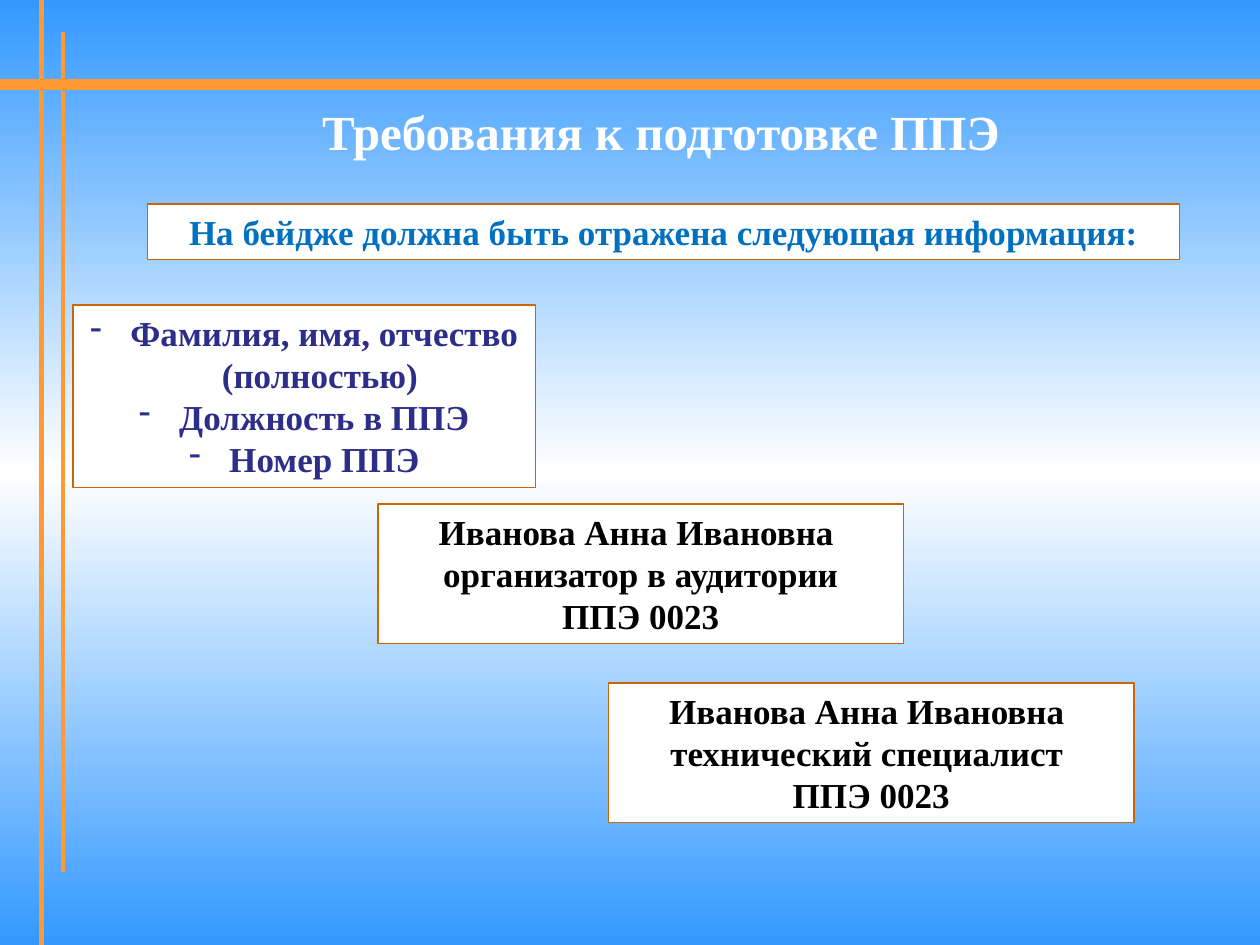
from copy import deepcopy
from dataclasses import dataclass

from pptx import Presentation
from pptx.dml.color import RGBColor
from pptx.enum.shapes import MSO_CONNECTOR, MSO_SHAPE
from pptx.enum.text import MSO_ANCHOR, MSO_AUTO_SIZE, PP_ALIGN
from pptx.oxml.ns import qn
from pptx.slide import Slide
from pptx.text.text import TextFrame
from pptx.util import Inches, Pt

CENTER = PP_ALIGN.CENTER
MIDDLE = MSO_ANCHOR.MIDDLE
TOP = MSO_ANCHOR.TOP
NO_FIT = MSO_AUTO_SIZE.NONE
GROW = MSO_AUTO_SIZE.SHAPE_TO_FIT_TEXT
STRAIGHT = MSO_CONNECTOR.STRAIGHT
RECTANGLE = MSO_SHAPE.RECTANGLE
TITLE_ONLY = 5


@dataclass(frozen=True)
class Theme:
    font: str = "Times New Roman"
    title_size: int = 28
    body_size: int = 20
    border_width: float = 0.75
    sky: str = "3399FF"
    white: str = "FFFFFF"
    rule: str = "FF9933"
    border: str = "CC6600"
    heading: str = "0070C0"
    listing: str = "2D2D8A"
    badge: str = "000000"


@dataclass(frozen=True)
class Rule:
    start: tuple[float, float]
    end: tuple[float, float]
    weight: float


@dataclass(frozen=True)
class Panel:
    place: tuple[float, float, float, float]
    lines: tuple[str, ...]
    color: str
    bulleted: bool = False


THEME = Theme()
BULLET_INDENT = Inches(0.25)
TITLE_PLACE = (0.66, 0.83, 9.17, 0.42)
BADGE_SIZE = (4.17, 1.11)

RULES = (
    Rule((0, 0.67), (10, 0.67), 6),
    Rule((0.33, 0), (0.33, 7.5), 3),
    Rule((0.5, 0.25), (0.5, 6.92), 2.25),
)

PANELS = (
    Panel((1.17, 1.62, 8.19, 0.44),
          ("На бейдже должна быть отражена следующая информация:",), THEME.heading),
    Panel((0.58, 2.42, 3.67, 1.45),
          (" Фамилия, имя, отчество (полностью)", " Должность в ППЭ", " Номер ППЭ"),
          THEME.listing, bulleted=True),
    Panel((3, 4, *BADGE_SIZE),
          ("Иванова Анна Ивановна ", "организатор в аудитории", "ППЭ 0023"), THEME.badge),
    Panel((4.83, 5.42, *BADGE_SIZE),
          ("Иванова Анна Ивановна ", "технический специалист ", "ППЭ 0023"), THEME.badge),
)


def rgb(color: str) -> RGBColor:
    return RGBColor.from_string(color)


def paint_background(page: Slide) -> None:
    """Fade from sky to white and back, top to bottom."""
    fill = page.background.fill
    fill.gradient()
    fill.gradient_angle = 270
    stop_list = page.element.find(".//" + qn("a:gsLst"))
    stop_list.append(deepcopy(stop_list[-1]))
    colors = (THEME.sky, THEME.white, THEME.sky)
    for stop, position, color in zip(fill.gradient_stops, (0, 0.5, 1), colors):
        stop.position = position
        stop.color.rgb = rgb(color)


def draw_rule(page: Slide, rule: Rule) -> None:
    points = [Inches(value) for value in (*rule.start, *rule.end)]
    line = page.shapes.add_connector(STRAIGHT, *points)
    line.line.color.rgb = rgb(THEME.rule)
    line.line.width = Pt(rule.weight)
    properties = line.element.spPr
    properties.append(properties.makeelement(qn("a:effectLst"), {}))


def add_dash(para) -> None:
    """Give the paragraph a dash bullet with a hanging indent."""
    properties = para._p.get_or_add_pPr()
    properties.set("marL", str(BULLET_INDENT))
    properties.set("indent", str(-BULLET_INDENT))
    bullet = properties.makeelement(qn("a:buChar"), {"char": "-"})
    properties.append(bullet)


def write_lines(frame: TextFrame, lines: tuple[str, ...], size: int, color: str,
                bulleted: bool = False) -> None:
    frame.word_wrap = True
    frame.text = "\n".join(lines)
    for para in frame.paragraphs:
        para.alignment = CENTER
        if bulleted:
            add_dash(para)
        for span in para.runs:
            span.font.name = THEME.font
            span.font.size = Pt(size)
            span.font.bold = True
            span.font.color.rgb = rgb(color)


def draw_title(page: Slide, text: str) -> None:
    title = page.shapes.title
    title.left, title.top, title.width, title.height = map(Inches, TITLE_PLACE)
    frame = title.text_frame
    write_lines(frame, (text,), THEME.title_size, THEME.white)
    frame.auto_size = NO_FIT
    frame.vertical_anchor = MIDDLE


def draw_panel(page: Slide, panel: Panel) -> None:
    box = page.shapes.add_shape(RECTANGLE, *map(Inches, panel.place))
    box.shadow.inherit = False
    box.fill.solid()
    box.fill.fore_color.rgb = rgb(THEME.white)
    box.line.color.rgb = rgb(THEME.border)
    box.line.width = Pt(THEME.border_width)
    frame = box.text_frame
    frame.auto_size = GROW
    frame.vertical_anchor = TOP
    write_lines(frame, panel.lines, THEME.body_size, panel.color, panel.bulleted)


def main() -> None:
    deck = Presentation()
    deck.slide_width = Inches(10)
    deck.slide_height = Inches(7.5)
    page = deck.slides.add_slide(deck.slide_layouts[TITLE_ONLY])
    paint_background(page)
    for rule in RULES:
        draw_rule(page, rule)
    draw_title(page, "Требования к подготовке ППЭ")
    for panel in PANELS:
        draw_panel(page, panel)
    deck.save("out.pptx")


if __name__ == "__main__":
    main()
